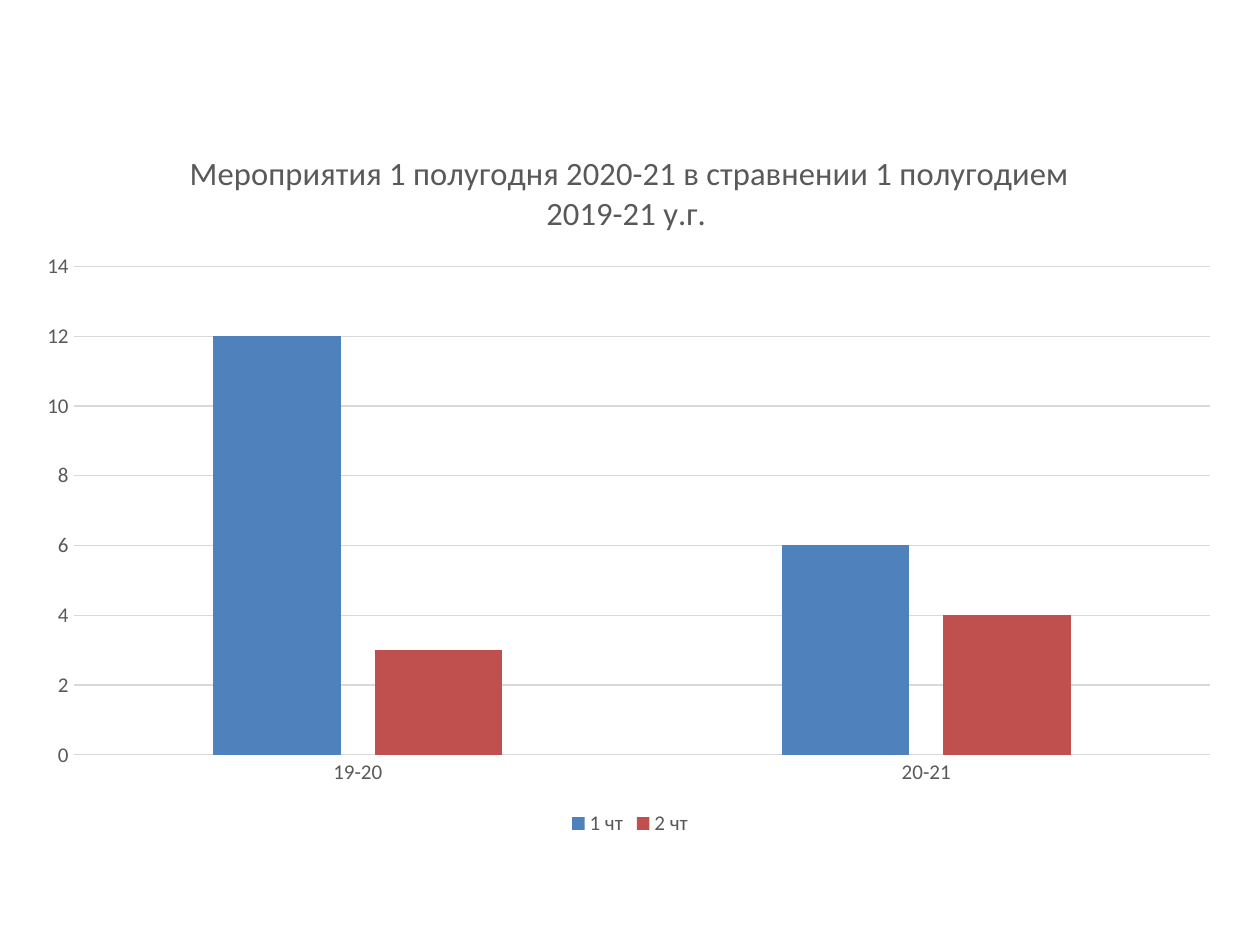
"""Build a slide comparing half-year events in a clustered column chart."""
from dataclasses import dataclass

from lxml import etree
from pptx import Presentation
from pptx.chart.data import CategoryChartData
from pptx.dml.color import RGBColor
from pptx.enum.chart import XL_CHART_TYPE, XL_LEGEND_POSITION, XL_TICK_MARK
from pptx.oxml.ns import qn
from pptx.util import Inches, Pt

COLUMNS = XL_CHART_TYPE.COLUMN_CLUSTERED
BOTTOM = XL_LEGEND_POSITION.BOTTOM
NO_TICK = XL_TICK_MARK.NONE
BLANK = 6


@dataclass(frozen=True)
class Theme:
    font: str = "Calibri"
    text: str = "595959"
    rule: str = "D9D9D9"
    background: str = "FFFFFF"
    series: tuple = ("4F81BD", "C0504D")
    title_size: float = 18.6
    label_size: float = 12
    rule_width: float = 0.75


def format_font(font, name, size, color):
    font.name, font.size, font.bold = name, Pt(size), False
    font.color.rgb = RGBColor.from_string(color)


def add_text(tf, text, **style):
    r = tf.paragraphs[0].add_run()
    r.text = text
    format_font(r.font, **style)


class SlideBuilder:
    def __init__(self, prs, theme):
        self.prs, self.theme = prs, theme
        self.s = prs.slides.add_slide(prs.slide_layouts[BLANK])
        fill = self.s.background.fill
        fill.solid()
        fill.fore_color.rgb = RGBColor.from_string(theme.background)

    def style(self, size):
        return {"name": self.theme.font, "size": size, "color": self.theme.text}

    def rule(self, line):
        line.color.rgb = RGBColor.from_string(self.theme.rule)
        line.width = Pt(self.theme.rule_width)

    def place_plot(self, chart, **shares):
        area = chart.element.find(".//" + qn("c:plotArea"))
        layout = area.find(qn("c:layout"))
        if layout is None:
            layout = etree.Element(qn("c:layout"))
            area.insert(0, layout)
        manual = etree.SubElement(layout, qn("c:manualLayout"))
        settings = {"layoutTarget": "inner", "xMode": "edge", "yMode": "edge", **shares}
        for tag, value in settings.items():
            etree.SubElement(manual, qn("c:" + tag)).set("val", str(value))

    def column_chart(self, title, categories, series, x, y, w, h):
        data = CategoryChartData()
        data.categories = categories
        for name, values in series.items():
            data.add_series(name, values)
        width, height = self.prs.slide_width, self.prs.slide_height
        box = (int(x * width), int(y * height), int(w * width), int(h * height))
        chart = self.s.shapes.add_chart(COLUMNS, *box, data).chart
        labels = self.style(self.theme.label_size)
        format_font(chart.font, **labels)

        chart.has_title = True
        add_text(chart.chart_title.text_frame, title, **self.style(self.theme.title_size))
        chart.chart_title.include_in_layout = False
        chart.has_legend = True
        chart.legend.position = BOTTOM
        chart.legend.include_in_layout = False
        format_font(chart.legend.font, **labels)

        for axis in (chart.category_axis, chart.value_axis):
            axis.major_tick_mark = axis.minor_tick_mark = NO_TICK
            format_font(axis.tick_labels.font, **labels)
        self.rule(chart.category_axis.format.line)
        chart.value_axis.format.line.fill.background()
        self.rule(chart.value_axis.major_gridlines.format.line)

        plot = chart.plots[0]
        plot.gap_width, plot.overlap, plot.vary_by_categories = 219, -27, False
        for item, color in zip(plot.series, self.theme.series):
            item.format.fill.solid()
            item.format.fill.fore_color.rgb = RGBColor.from_string(color)
        self.place_plot(chart, x=0.04, y=0.2, w=0.94, h=0.68)


def main():
    prs = Presentation()
    prs.slide_width, prs.slide_height = Inches(10), Inches(7.5)
    slide = SlideBuilder(prs, Theme())
    slide.column_chart(
        "Мероприятия 1 полугодня 2020-21 в стравнении 1 полугодием 2019-21 у.г. ",
        ["19-20", "20-21"],
        {"1 чт": (12, 6), "2 чт": (3, 4)},
        x=0.02, y=0.13, w=0.96, h=0.76,
    )
    prs.save("out.pptx")


if __name__ == "__main__":
    main()
